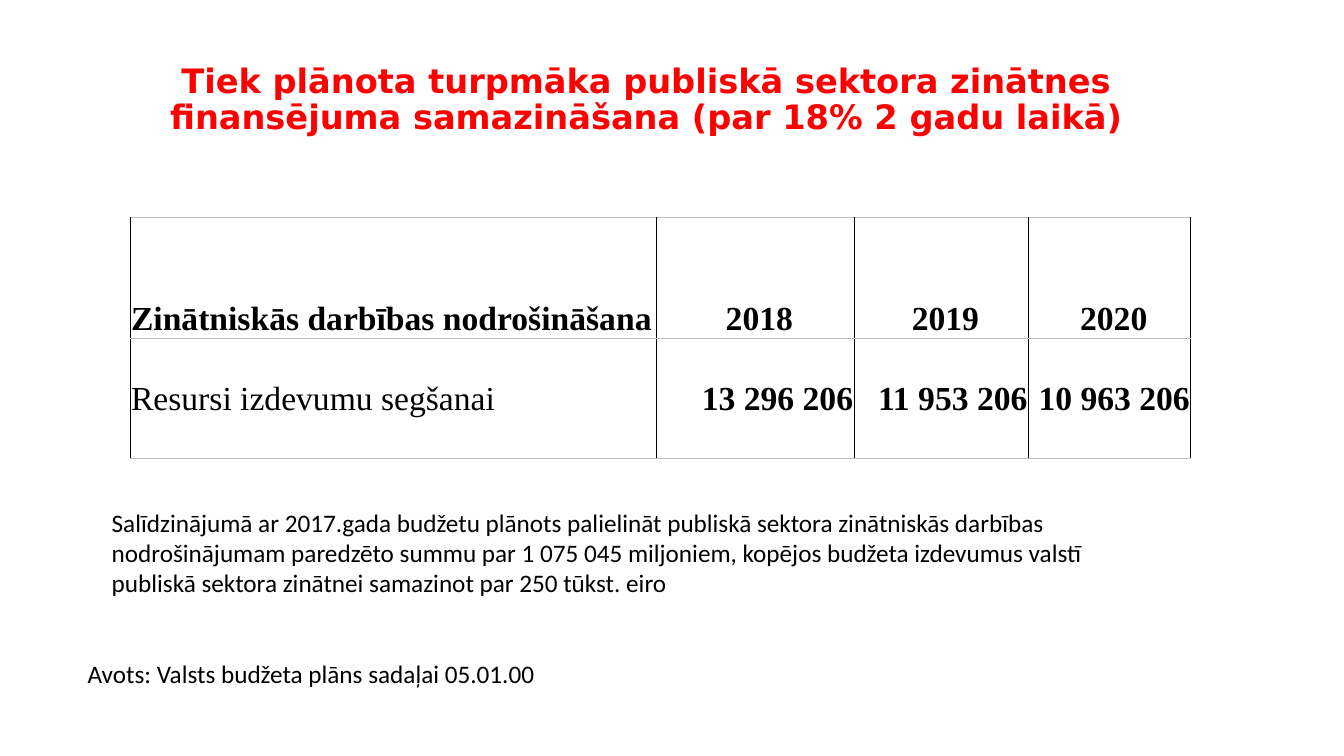
from lxml import etree
from pptx import Presentation
from pptx import util as u
from pptx.dml.color import RGBColor
from pptx.enum import text
from pptx.oxml import ns

PX = 9144  # EMU, 100 px to the inch
ALIGN = text.PP_ALIGN
ANCHOR = text.MSO_ANCHOR

TITLE_FONT = {"name": "DejaVu Sans", "size": u.Pt(24), "bold": True}
NOTE_FONT = {"name": "Calibri", "size": u.Pt(18), "bold": False}
LABEL_FONT = {"name": "Times New Roman", "size": u.Pt(24), "bold": False}
STRONG_FONT = {**LABEL_FONT, "bold": True}

CELL_MARGINS = {"margin_left": PX, "margin_top": PX, "margin_right": PX, "margin_bottom": 0}
BORDERS = {"lnL": "000000", "lnR": "000000", "lnT": "BFBFBF", "lnB": "BFBFBF"}

COLUMN_WIDTHS = [522, 196, 173, 161]
# Each row: anchor, label font, alignment of the figures, cell texts
BUDGET_ROWS = [
    (ANCHOR.BOTTOM, STRONG_FONT, ALIGN.CENTER,
     ["Zinātniskās darbības nodrošināšana", " 2018", " 2019", " 2020"]),
    (ANCHOR.MIDDLE, LABEL_FONT, ALIGN.RIGHT,
     ["Resursi izdevumu segšanai", "13 296 206", "11 953 206", "10 963 206"]),
]


def color(value):
    return RGBColor.from_string(value)


def set_all(target, values):
    for name, value in values.items():
        setattr(target, name, value)


def write(frame, words, font, fill="000000", **paragraph_format):
    paragraph = frame.paragraphs[0]
    set_all(paragraph, paragraph_format)
    run = paragraph.add_run()
    run.text = words
    set_all(run.font, font)
    run.font.color.rgb = color(fill)


def add_text(slide, box, words, font, **style):
    shape = slide.shapes.add_textbox(*(value * PX for value in box))
    shape.text_frame.word_wrap = True
    write(shape.text_frame, words, font, **style)


def add_borders(cell):
    properties = cell._tc.get_or_add_tcPr()
    for position, (side, value) in enumerate(BORDERS.items()):
        line = etree.Element(ns.qn(f"a:{side}"), w=str(u.Pt(0.5)))
        fill = etree.SubElement(line, ns.qn("a:solidFill"))
        etree.SubElement(fill, ns.qn("a:srgbClr"), val=value)
        properties.insert(position, line)


def add_budget_table(slide, box):
    left, top, width, height = (value * PX for value in box)
    table = slide.shapes.add_table(
        len(BUDGET_ROWS), len(COLUMN_WIDTHS), left, top, width, height).table
    set_all(table, {"first_row": False, "horz_banding": False})
    for column, column_width in zip(table.columns, COLUMN_WIDTHS):
        column.width = column_width * PX
    for row, (anchor, label_font, figure_align, words) in enumerate(BUDGET_ROWS):
        for column, content in enumerate(words):
            cell = table.cell(row, column)
            set_all(cell, {**CELL_MARGINS, "vertical_anchor": anchor})
            cell.fill.solid()
            cell.fill.fore_color.rgb = color("FFFFFF")
            add_borders(cell)
            write(cell.text_frame, content,
                  STRONG_FONT if column else label_font,
                  alignment=figure_align if column else ALIGN.LEFT)


def build_budget_slide(presentation):
    slide = presentation.slides.add_slide(presentation.slide_layouts[6])
    add_text(slide, (101, 59, 1080, 113),
             "Tiek plānota turpmāka publiskā sektora zinātnes finansējuma "
             "samazināšana (par 18% 2 gadu laikā)",
             TITLE_FONT, fill="FF0000", alignment=ALIGN.CENTER, line_spacing=0.9)
    add_budget_table(slide, (129, 216, sum(COLUMN_WIDTHS), 239))
    add_text(slide, (77, 648, 718, 40),
             "Avots: Valsts budžeta plāns sadaļai 05.01.00", NOTE_FONT)
    add_text(slide, (101, 498, 1064, 101),
             "Salīdzinājumā ar 2017.gada budžetu plānots palielināt publiskā sektora "
             "zinātniskās darbības nodrošinājumam paredzēto summu par 1 075 045 miljoniem, "
             "kopējos budžeta izdevumus valstī publiskā sektora zinātnei samazinot par "
             "250 tūkst. eiro", NOTE_FONT)


def main():
    presentation = Presentation()
    set_all(presentation, {"slide_width": 1333 * PX, "slide_height": 750 * PX})
    build_budget_slide(presentation)
    presentation.save("out.pptx")


if __name__ == "__main__":
    main()
